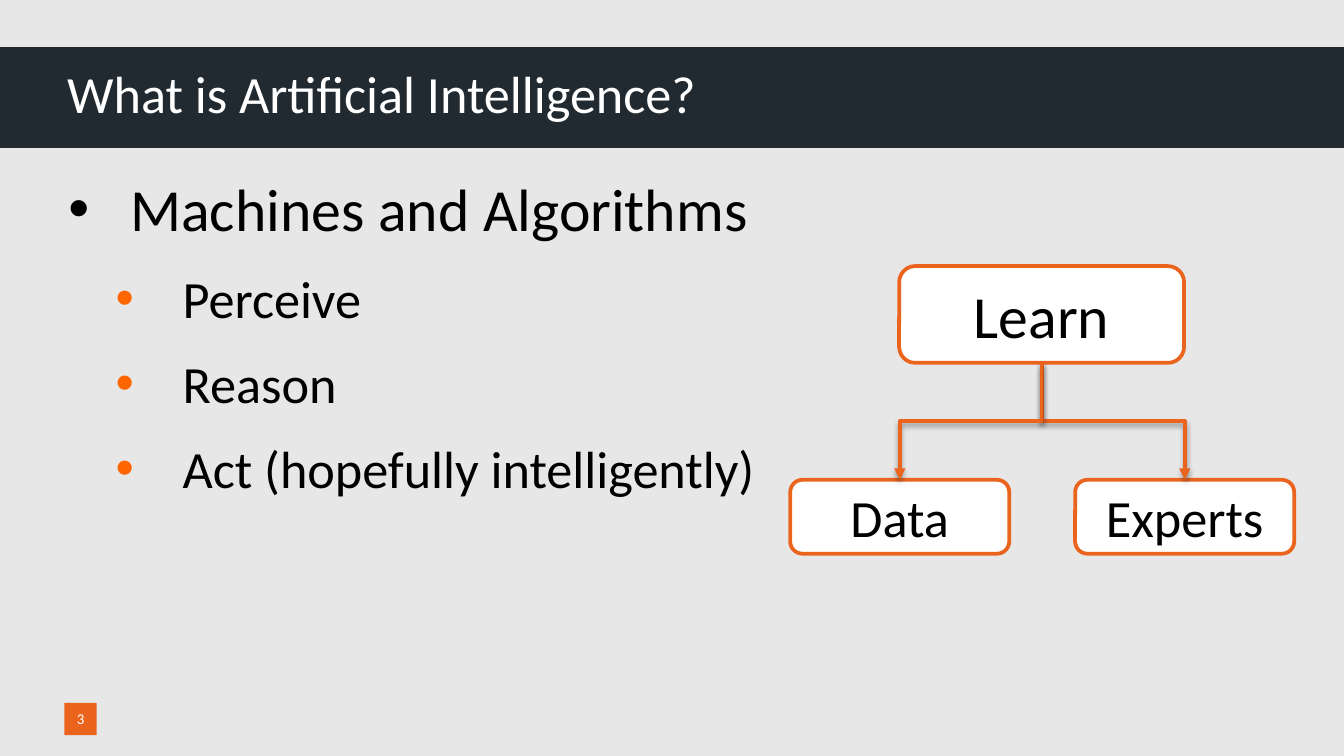
from lxml import etree
from pptx import Presentation
from pptx.dml.color import RGBColor
from pptx.enum import shapes, text
from pptx.oxml import ns
from pptx.util import Inches, Pt

DARK = RGBColor(0x20, 0x2A, 0x30)
BACKGROUND = RGBColor(0xE7, 0xE7, 0xE8)
ORANGE = RGBColor(0xEB, 0x64, 0x1E)
BULLET_ORANGE = RGBColor(0xFF, 0x66, 0x00)
BLACK = RGBColor(0, 0, 0)
WHITE = RGBColor(0xFF, 0xFF, 0xFF)


def add_element(parent, tag, **attributes):
    element = etree.SubElement(parent, ns.qn(tag))
    for name, value in attributes.items():
        element.set(name, str(value))
    return element


class SlideBuilder:
    font = "Calibri"
    line_width = Pt(2)

    def __init__(self, slide):
        self.slide = slide
        slide.background.fill.solid()
        slide.background.fill.fore_color.rgb = BACKGROUND

    def add_run(self, paragraph, words, size, color):
        run = paragraph.add_run()
        run.text = words
        run.font.name = self.font
        run.font.size = Pt(size)
        run.font.color.rgb = color

    def clear_margins(self, frame):
        frame.margin_left = frame.margin_right = 0
        frame.margin_top = frame.margin_bottom = 0

    def box(self, kind, place, fill, line=None):
        shape = self.slide.shapes.add_shape(kind, *map(Inches, place))
        shape.shadow.inherit = False
        shape.fill.solid()
        shape.fill.fore_color.rgb = fill
        if line is None:
            shape.line.fill.background()
        else:
            shape.line.color.rgb = line
            shape.line.width = self.line_width
        return shape

    def label(self, shape, words, size, color):
        frame = shape.text_frame
        frame.vertical_anchor = text.MSO_ANCHOR.MIDDLE
        paragraph = frame.paragraphs[0]
        paragraph.alignment = text.PP_ALIGN.CENTER
        self.add_run(paragraph, words, size, color)

    def node(self, words, size, place):
        shape = self.box(shapes.MSO_SHAPE.ROUNDED_RECTANGLE, place, WHITE, ORANGE)
        self.label(shape, words, size, BLACK)
        return shape

    def text_box(self, place):
        frame = self.slide.shapes.add_textbox(*map(Inches, place)).text_frame
        frame.word_wrap = True
        self.clear_margins(frame)
        return frame

    def title(self, words, place):
        frame = self.text_box(place)
        frame.vertical_anchor = text.MSO_ANCHOR.MIDDLE
        self.add_run(frame.paragraphs[0], words, 28, WHITE)

    def bullets(self, items, place):
        """Write (words, level) pairs as a bulleted list."""
        styles = [(0.46, 0.46, 32, BLACK), (0.85, 0.5, 28, BULLET_ORANGE)]
        frame = self.text_box(place)
        for index, (words, level) in enumerate(items):
            margin, hanging, size, bullet_color = styles[level]
            paragraph = frame.add_paragraph() if index else frame.paragraphs[0]
            paragraph.level = level
            paragraph.space_before = Pt(12 if index else 0)
            properties = paragraph._p.get_or_add_pPr()
            properties.set("marL", str(Inches(margin)))
            properties.set("indent", str(-Inches(hanging)))
            color = add_element(properties, "a:buClr")
            add_element(color, "a:srgbClr", val=bullet_color)
            add_element(properties, "a:buFont", typeface="Arial")
            add_element(properties, "a:buChar", char="•")
            self.add_run(paragraph, words, size, BLACK)

    def branch(self, parent, child):
        """Run an elbow arrow from the parent's bottom to the child's top."""
        begin_x, begin_y = parent.left + parent.width // 2, parent.top + parent.height
        end_x, end_y = child.left + child.width // 2, child.top
        center_x, center_y = (begin_x + end_x) // 2, (begin_y + end_y) // 2
        # The elbow is laid out sideways, then turned to leave downwards.
        side = 1 if end_x > begin_x else -1
        half_width = side * (end_y - begin_y) // 2
        half_height = abs(end_x - begin_x) // 2
        connector = self.slide.shapes.add_connector(
            shapes.MSO_CONNECTOR.ELBOW,
            center_x + half_width, center_y - half_height,
            center_x - half_width, center_y + half_height)
        connector.line.color.rgb = ORANGE
        connector.line.width = self.line_width
        properties = connector._element.spPr
        rotation = 270 if side > 0 else 90
        properties.find(ns.qn("a:xfrm")).set("rot", str(rotation * 60000))
        add_element(properties.find(ns.qn("a:ln")), "a:tailEnd", type="triangle")
        effects = add_element(properties, "a:effectLst")
        shadow = add_element(effects, "a:outerShdw", blurRad=Pt(3.1), dist=Pt(1.6),
                             dir=90 * 60000, rotWithShape=0)
        color = add_element(shadow, "a:srgbClr", val=BLACK)
        add_element(color, "a:alpha", val=38000)


def main():
    presentation = Presentation()
    presentation.slide_width = Inches(10)
    presentation.slide_height = presentation.slide_width * 9 // 16
    builder = SlideBuilder(presentation.slides.add_slide(presentation.slide_layouts[6]))

    builder.box(shapes.MSO_SHAPE.RECTANGLE, (0, 0.35, 10, 0.75), DARK)
    builder.bullets([("Machines and Algorithms", 0), ("Perceive", 1), ("Reason", 1),
                     ("Act (hopefully intelligently)", 1)], (0.51, 1.28, 9, 3.71))
    builder.title("What is Artificial Intelligence?", (0.5, 0.31, 7.59, 0.76))

    page_number = builder.box(shapes.MSO_SHAPE.RECTANGLE, (0.48, 5.23, 0.24, 0.24), ORANGE)
    builder.clear_margins(page_number.text_frame)
    builder.label(page_number, "3", 8, WHITE)

    learn = builder.node("Learn", 32, (6.69, 1.98, 2.12, 0.72))
    data = builder.node("Data", 28, (5.88, 3.57, 1.63, 0.55))
    experts = builder.node("Experts", 28, (8, 3.57, 1.63, 0.55))
    for child in (experts, data):
        builder.branch(learn, child)

    presentation.save("out.pptx")


if __name__ == "__main__":
    main()
